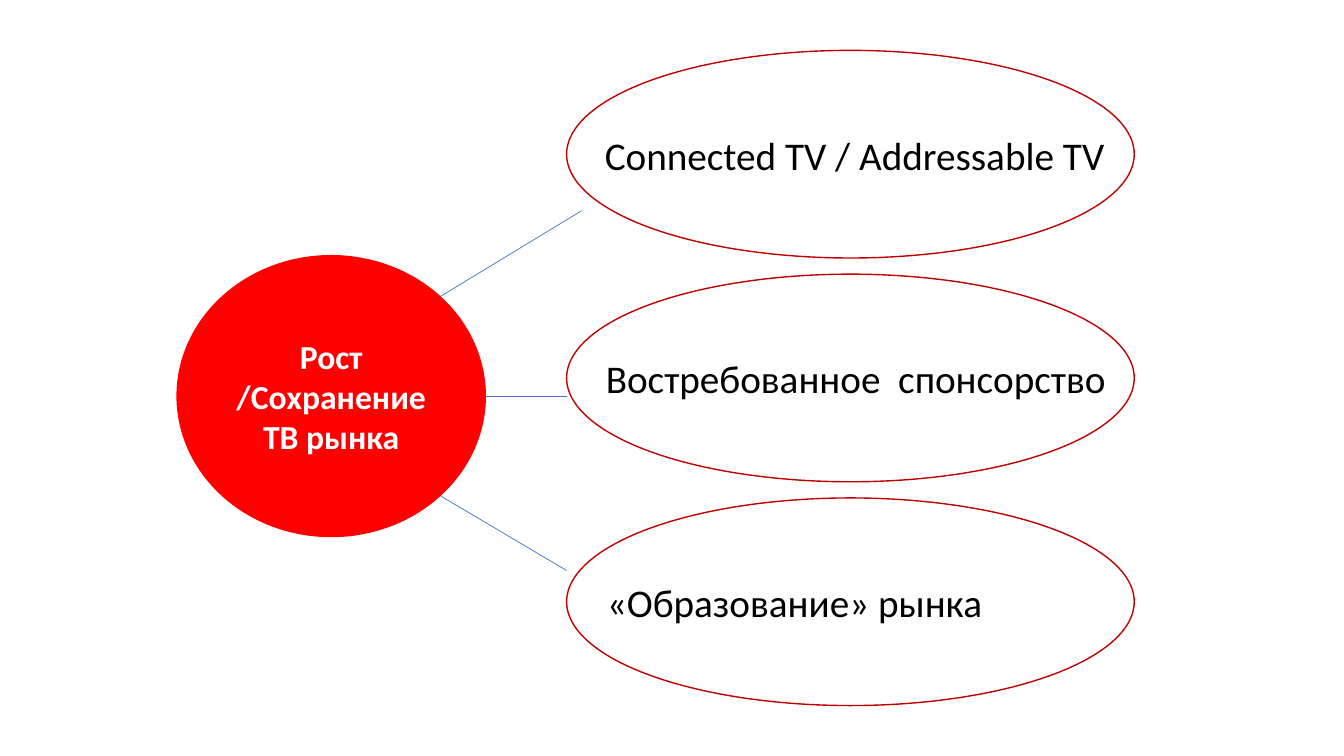
from lxml import etree
from pptx import Presentation
from pptx.dml.color import RGBColor
from pptx.enum.shapes import MSO_CONNECTOR, MSO_SHAPE
from pptx.enum.text import MSO_ANCHOR, MSO_AUTO_SIZE, PP_ALIGN
from pptx.oxml.ns import qn
from pptx.util import Inches, Pt

OVAL = MSO_SHAPE.OVAL
STRAIGHT = MSO_CONNECTOR.STRAIGHT
MIDDLE = MSO_ANCHOR.MIDDLE
GROW = MSO_AUTO_SIZE.SHAPE_TO_FIT_TEXT
LEFT, CENTER = PP_ALIGN.LEFT, PP_ALIGN.CENTER

COLORS = {"hub": "FF0000", "outline": "C00000", "link": "4472C4",
          "white": "FFFFFF", "black": "000000"}
HUB_FONT = {"name": "Calibri", "size": Pt(24), "bold": True}
TOPIC_FONT = {"name": "Calibri", "size": Pt(28)}

TOPIC_LEFT, TOPIC_TOP, TOPIC_PITCH = 5.62, 0.5, 2.22
LABEL_LEFT, LABEL_TOP, LABEL_SHIFT = 5.9, 1.25, 0.01
TOPICS = ["Connected TV / Addressable TV",
          "Востребованное  спонсорство",
          "«Образование» рынка"]
LINKS = [((4.37, 2.94), (5.77, 2.09)),
         ((4.37, 4.92), (5.62, 5.66)),
         ((4.82, 3.93), (5.62, 3.93))]


def rgb(name):
    return RGBColor.from_string(COLORS[name])


class SlideBuilder:
    def __init__(self, slide):
        self.shapes = slide.shapes

    def add_text(self, tf, text, color, align, font):
        p = tf.paragraphs[0]
        p.alignment = align
        r = p.add_run()
        r.text = text
        for key, value in font.items():
            setattr(r.font, key, value)
        r.font.color.rgb = rgb(color)

    def ellipse(self, x, y, w, h, fill=None, line=None):
        s = self.shapes.add_shape(OVAL, Inches(x), Inches(y), Inches(w), Inches(h))
        s.shadow.inherit = False
        if fill:
            s.fill.solid()
            s.fill.fore_color.rgb = rgb(fill)
        else:
            s.fill.background()
        if line:
            s.line.color.rgb = rgb(line)
            s.line.width = Pt(1)
        else:
            s.line.fill.background()
        return s

    def hub(self, text, x, y, w, h):
        tf = self.ellipse(x, y, w, h, fill="hub").text_frame
        tf.word_wrap = True
        tf.vertical_anchor = MIDDLE
        self.add_text(tf, text, "white", CENTER, HUB_FONT)

    def link(self, start, end):
        points = [Inches(v) for v in (*start, *end)]
        s = self.shapes.add_connector(STRAIGHT, *points)
        s.line.color.rgb = rgb("link")
        s.line.width = Pt(0.5)
        etree.SubElement(s._element.spPr, qn("a:effectLst"))

    def label(self, text, x, y, w, h):
        s = self.shapes.add_textbox(Inches(x), Inches(y), Inches(w), Inches(h))
        tf = s.text_frame
        tf.word_wrap = True
        tf.auto_size = GROW
        self.add_text(tf, text, "black", LEFT, TOPIC_FONT)


def main():
    prs = Presentation()
    prs.slide_width, prs.slide_height = Inches(13.33), Inches(7.5)
    builder = SlideBuilder(prs.slides.add_slide(prs.slide_layouts[6]))

    for i in range(len(TOPICS)):
        builder.ellipse(TOPIC_LEFT, TOPIC_TOP + i * TOPIC_PITCH, 5.63, 2.06, line="outline")
    builder.hub("Рост /Сохранение ТВ рынка", 1.75, 2.53, 3.07, 2.8)
    for start, end in LINKS:
        builder.link(start, end)
    for i, topic in enumerate(TOPICS):
        builder.label(topic, LABEL_LEFT + i * LABEL_SHIFT,
                      LABEL_TOP + i * TOPIC_PITCH, 5.52, 0.57)

    prs.save("out.pptx")


if __name__ == "__main__":
    main()
